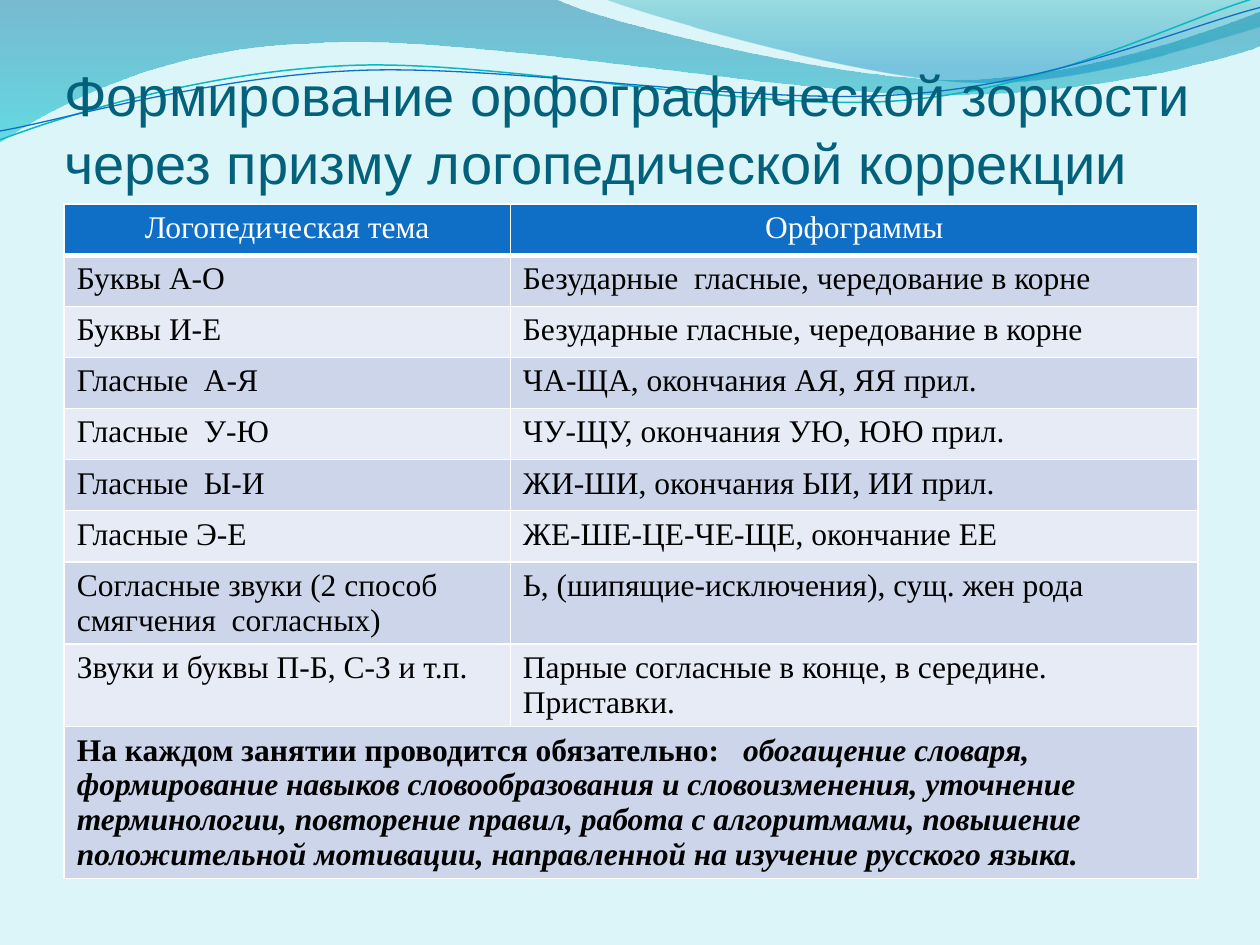
import math

import pptx
import pptx.dml.color
import pptx.enum.text
import pptx.oxml
import pptx.oxml.ns
import pptx.util
from pptx.util import Inches

NS = pptx.oxml.ns.nsdecls("a")
WHITE, BLACK, BLUE = "FFFFFF", "000000", "0F6FC6"
BANDS = ("CCD5EA", "E7EBF5")
TILT = 2.7

LEFT_WAVE = [(0, 0), (4.4, -0.01), (4.76, 0.17, 6.64, 0.63, 7.58, 0.63),
             (8.53, 0.63, 9.58, 0.26, 10, 0.09), (10.01, 0.36),
             (9.83, 0.44, 8.7, 0.76, 7.46, 0.75), (6.22, 0.75, 3.82, 0.28, 2.57, 0.34),
             (1.29, 0.36, 0.46, 0.83, -0.01, 1.13)]
RIGHT_WAVE = [(4.79, -0.01), (5.09, 0.11, 6.82, 0.62, 7.69, 0.65),
              (8.56, 0.69, 9.61, 0.32, 10, 0.21), (10, 0)]
TEAL_CURVE = [(0, 1.11), (0.48, 0.93, 1.58, 0.57, 2.77, 0.52),
              (3.95, 0.47, 5.93, 0.89, 7.13, 0.8), (8.33, 0.71, 9.38, 0.15, 9.98, -0.02)]
BLUE_CURVE = [(0, 1.04), (0.47, 0.96, 1.64, 0.61, 2.83, 0.56),
              (4.03, 0.51, 5.97, 0.84, 7.17, 0.75), (8.36, 0.67, 9.41, 0.21, 10, 0.06)]

TITLE = "Формирование орфографической зоркости через призму логопедической коррекции"
ROWS = [
    ("Логопедическая тема", "Орфограммы"),
    ("Буквы А-О", "Безударные  гласные, чередование в корне"),
    ("Буквы И-Е", "Безударные гласные, чередование в корне"),
    ("Гласные  А-Я", "ЧА-ЩА, окончания АЯ, ЯЯ прил."),
    ("Гласные  У-Ю", "ЧУ-ЩУ, окончания УЮ, ЮЮ прил."),
    ("Гласные  Ы-И", "ЖИ-ШИ, окончания ЫИ, ИИ прил."),
    ("Гласные Э-Е", "ЖЕ-ШЕ-ЦЕ-ЧЕ-ЩЕ, окончание ЕЕ"),
    ("Согласные звуки (2 способ смягчения  согласных)",
     "Ь, (шипящие-исключения), сущ. жен рода"),
    ("Звуки и буквы П-Б, С-З и т.п.", "Парные согласные в конце, в середине. Приставки."),
]
SUMMARY_LEAD = "На каждом занятии проводится обязательно:   "
SUMMARY = ("обогащение словаря, формирование навыков словообразования и словоизменения, "
           "уточнение терминологии, повторение правил, работа с алгоритмами, повышение "
           "положительной мотивации, направленной на изучение русского языка.")


def rgb(value):
    return pptx.dml.color.RGBColor.from_string(value)


def format_run(r, size, font, color, bold=False, italic=False):
    r.font.size = pptx.util.Pt(size)
    r.font.name = font
    r.font.color.rgb = rgb(color)
    r.font.bold = bold
    r.font.italic = italic


def pairs(segment):
    return list(zip(segment[::2], segment[1::2]))


def add_outline(shapes, segments, closed):
    anchors = [(Inches(x), Inches(y)) for x, y in (segment[-2:] for segment in segments)]
    builder = shapes.build_freeform(*anchors[0])
    builder.add_line_segments(anchors[1:], close=closed)
    sp = builder.convert_to_shape()
    sp.shadow.inherit = False
    lines = list(sp._element.iter(pptx.oxml.ns.qn("a:lnTo")))
    for line, segment in zip(lines, segments[1:]):
        if len(segment) == 6:
            points = "".join(f'<a:pt x="{Inches(x) - sp.left}" y="{Inches(y) - sp.top}"/>'
                             for x, y in pairs(segment))
            curve = pptx.oxml.parse_xml(f"<a:cubicBezTo {NS}>{points}</a:cubicBezTo>")
            line.getparent().replace(line, curve)
    return sp


def add_wave(s, segments, stops):
    sp = add_outline(s.shapes, segments, True)
    sp.line.fill.background()
    sp.fill.background()
    stop_xml = "".join(
        f'<a:gs pos="{pos * 1000}"><a:srgbClr val="{color}">'
        f'<a:alpha val="{alpha * 1000}"/></a:srgbClr></a:gs>'
        for pos, color, alpha in stops)
    gradient = pptx.oxml.parse_xml(
        f'<a:gradFill {NS} rotWithShape="1"><a:gsLst>{stop_xml}</a:gsLst>'
        '<a:lin ang="5400000" scaled="0"/></a:gradFill>')
    properties = sp._element.spPr
    properties.replace(properties.find(pptx.oxml.ns.qn("a:noFill")), gradient)


def turn(segment, center, degrees):
    cos, sin = math.cos(math.radians(degrees)), math.sin(math.radians(degrees))
    cx, cy = center
    turned = []
    for x, y in pairs(segment):
        dx, dy = x - cx, y - cy
        turned += [cx + dx * cos - dy * sin, cy + dx * sin + dy * cos]
    return tuple(turned)


def add_curve(group, segments, center, color, width):
    level = [turn(segment, center, TILT) for segment in segments]
    sp = add_outline(group.shapes, level, False)
    sp.rotation = 360 - TILT
    sp.fill.background()
    sp.line.color.rgb = rgb(color)
    sp.line.width = pptx.util.Pt(width)


def set_title(s):
    sp = s.shapes.title
    s.shapes._spTree.append(sp._element)
    sp.left, sp.top, sp.width, sp.height = (Inches(v) for v in (0.51, 0.76, 9, 0.79))
    tf = sp.text_frame
    tf.text = TITLE
    tf.word_wrap = True
    tf.auto_size = pptx.enum.text.MSO_AUTO_SIZE.NONE
    tf.vertical_anchor = pptx.enum.text.MSO_ANCHOR.BOTTOM
    tf.margin_left = tf.margin_right = tf.margin_bottom = 0
    tf.margin_top = Inches(0.05)
    p = tf.paragraphs[0]
    p.alignment = pptx.enum.text.PP_ALIGN.LEFT
    format_run(p.runs[0], 32, "Arial", "04617B")


def style_cell(cell, row):
    widths = {"L": 1, "R": 1, "T": 3 if row == 1 else 1, "B": 3 if row == 0 else 1}
    properties = cell._tc.get_or_add_tcPr()
    for side, width in widths.items():
        properties.append(pptx.oxml.parse_xml(
            f'<a:ln{side} {NS} w="{width * 12700}"><a:solidFill>'
            f'<a:srgbClr val="{WHITE}"/></a:solidFill></a:ln{side}>'))
    cell.fill.solid()
    cell.fill.fore_color.rgb = rgb(BLUE if row == 0 else BANDS[(row - 1) % 2])


def add_topics_table(s):
    count = len(ROWS) + 1
    table = s.shapes.add_table(count, 2, Inches(0.51), Inches(1.62),
                               Inches(9), Inches(5.54)).table
    for column, width in zip(table.columns, (3.54, 5.46)):
        column.width = Inches(width)
    for row in range(count):
        table.rows[row].height = pptx.util.Pt(29.2)
        for col in range(2):
            style_cell(table.cell(row, col), row)
    for row, texts in enumerate(ROWS):
        for col, text in enumerate(texts):
            tf = table.cell(row, col).text_frame
            tf.text = text
            p = tf.paragraphs[0]
            if row == 0:
                p.alignment = pptx.enum.text.PP_ALIGN.CENTER
            format_run(p.runs[0], 18, "Times New Roman", BLACK if row else WHITE)
    summary = table.cell(count - 1, 0)
    summary.merge(table.cell(count - 1, 1))
    p = summary.text_frame.paragraphs[0]
    for text, italic in ((SUMMARY_LEAD, False), (SUMMARY, True)):
        r = p.add_run()
        r.text = text
        format_run(r, 18, "Times New Roman", BLACK, True, italic)


def main():
    prs = pptx.Presentation()
    prs.slide_width, prs.slide_height = Inches(10), Inches(7.5)
    s = prs.slides.add_slide(prs.slide_layouts[5])
    s.background.fill.solid()
    s.background.fill.fore_color.rgb = rgb("DBF5F9")
    add_wave(s, LEFT_WAVE, [(0, "0074A1", 45), (100, "00C6CF", 55)])
    add_wave(s, RIGHT_WAVE, [(0, "00A1A9", 30), (80, "008BBF", 45)])
    group = s.shapes.add_group_shape()
    add_curve(group, TEAL_CURVE, (4.99, 0.57), "0AB8BF", 0.85)
    add_curve(group, BLUE_CURVE, (5, 0.59), BLUE, 0.75)
    set_title(s)
    add_topics_table(s)
    prs.save("out.pptx")


if __name__ == "__main__":
    main()
